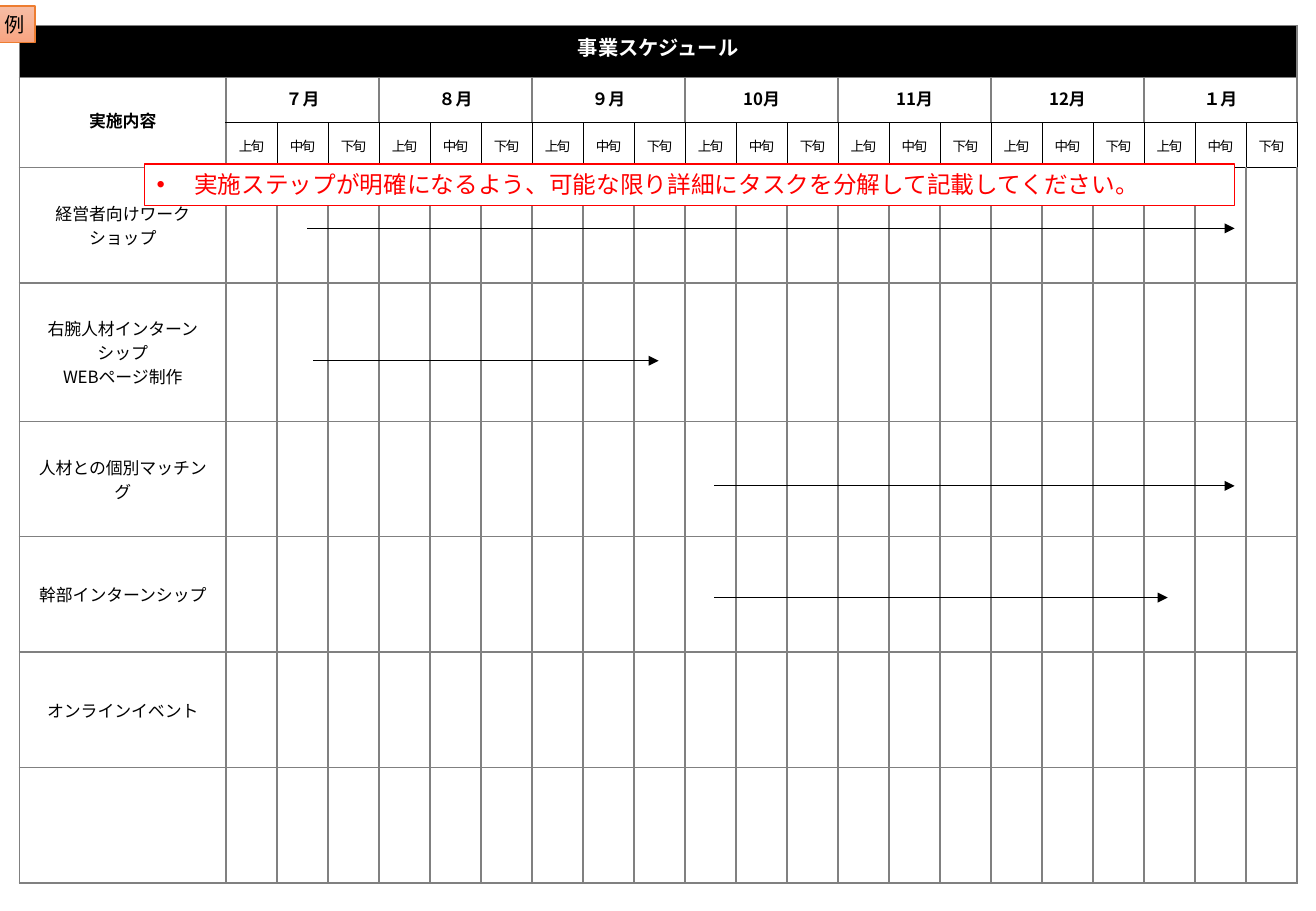
from pptx import Presentation
from pptx.dml.color import RGBColor
from pptx.enum.shapes import MSO_CONNECTOR as Connector, MSO_SHAPE as Shape
from pptx.enum.text import MSO_ANCHOR as Anchor, MSO_AUTO_SIZE as AutoSize, PP_ALIGN as Align
from pptx.oxml.ns import qn
from pptx.util import Inches, Pt
from lxml.etree import SubElement

MONTHS = ["７月", "８月", "９月", "10月", "11月", "12月", "１月"]
PERIODS = ["上旬", "中旬", "下旬"]
TASKS = [
    "経営者向けワークショップ",
    "右腕人材インターンシップ\nWEBページ制作",
    "人材との個別マッチング",
    "幹部インターンシップ",
    "オンラインイベント",
    "",
]
TASK_SPANS = [(2.53, 10.16, 1.88), (2.58, 5.42, 2.97), (5.88, 10.16, 4), (5.88, 9.61, 4.92)]
ROW_HEIGHTS = [0.43, 0.37, 0.37, 0.95, 1.14, 0.95, 0.95, 0.95, 0.95]
COLUMN_WIDTHS = [1.7] + [0.42] * len(MONTHS) * len(PERIODS)
MONTH_ROW, PERIOD_ROW, FIRST_TASK_ROW = 1, 2, 3
GREY_BORDER = ("808080", 1)
BLACK_BORDER = ("000000", 0.5)


def rgb(value):
    return RGBColor.from_string(value)


class ScheduleSlide:
    font = "Noto Sans CJK JP"

    def __init__(self, presentation):
        self.shapes = presentation.slides.add_slide(presentation.slide_layouts[6]).shapes

    def style_text(self, frame, size, color="000000", bold=False, align=Align.CENTER, spacing=None):
        for paragraph in frame.paragraphs:
            paragraph.alignment = align
            if spacing is not None:
                paragraph.line_spacing = Pt(spacing)
            for run in paragraph.runs:
                run.font.size = Pt(size)
                run.font.bold = bold
                run.font.color.rgb = rgb(color)
                run.font.name = self.font
                SubElement(run.font._element, qn("a:ea"), typeface=self.font)

    def border(self, cell, sides):
        properties = cell._tc.get_or_add_tcPr()
        for position, side in enumerate("LRTB"):
            color, width = sides[side]
            line = SubElement(properties, qn(f"a:ln{side}"), w=str(Pt(width)))
            fill = SubElement(line, qn("a:solidFill"))
            SubElement(fill, qn("a:srgbClr"), val=color)
            properties.insert(position, line)

    def table(self, left, top, widths, heights):
        frame = self.shapes.add_table(len(heights), len(widths), Inches(left), Inches(top),
                                      Inches(sum(widths)), Inches(sum(heights)))
        table = frame.table
        table.first_row = table.horz_banding = False
        for column, width in zip(table.columns, widths):
            column.width = Inches(width)
        for row, height in zip(table.rows, heights):
            row.height = Inches(height)
        return table

    def write_cell(self, cell, text, size, **style):
        cell.text = text
        cell.vertical_anchor = Anchor.MIDDLE
        self.style_text(cell.text_frame, size, **style)

    def box(self, text, left, top, width, height, outline, outline_width):
        box = self.shapes.add_shape(Shape.RECTANGLE, Inches(left), Inches(top),
                                    Inches(width), Inches(height))
        box.shadow.inherit = False
        box.line.color.rgb = rgb(outline)
        box.line.width = Pt(outline_width)
        box.text_frame.text = text
        return box

    def callout(self, text, left, top, width, height):
        box = self.box(text, left, top, width, height, "FF0000", 0.75)
        box.fill.solid()
        box.fill.fore_color.rgb = rgb("FFFFFF")
        frame = box.text_frame
        frame.word_wrap = True
        frame.auto_size = AutoSize.SHAPE_TO_FIT_TEXT
        frame.vertical_anchor = Anchor.TOP
        properties = frame.paragraphs[0]._p.get_or_add_pPr()
        properties.set("marL", str(Inches(0.31)))
        properties.set("indent", str(Inches(-0.31)))
        SubElement(properties, qn("a:buFont"), typeface="Arial")
        SubElement(properties, qn("a:buChar"), char="•")
        self.style_text(frame, 14, color="FF0000", align=Align.LEFT)

    def tag(self, text, left, top, width, height):
        box = self.box(text, left, top, width, height, "ED7D31", 1)
        box.fill.gradient()
        box.fill.gradient_angle = 270
        for stop, color in zip(box.fill.gradient_stops, ["F7BDA5", "F8A582"]):
            stop.color.rgb = rgb(color)
        frame = box.text_frame
        frame.word_wrap = False
        frame.vertical_anchor = Anchor.MIDDLE
        frame.margin_left = frame.margin_right = frame.margin_top = frame.margin_bottom = 0
        self.style_text(frame, 12)

    def arrow(self, start, end, y):
        arrow = self.shapes.add_connector(Connector.STRAIGHT, Inches(start), Inches(y),
                                          Inches(end), Inches(y))
        arrow.line.color.rgb = rgb("000000")
        arrow.line.width = Pt(0.5)
        SubElement(arrow.line._get_or_add_ln(), qn("a:tailEnd"), type="triangle")
        SubElement(arrow._element.spPr, qn("a:effectLst"))


def cell_borders(row, column):
    sides = dict.fromkeys("LRTB", GREY_BORDER)
    if column > 0:
        if row == MONTH_ROW:
            sides["B"] = BLACK_BORDER
        elif row == PERIOD_ROW:
            sides = dict.fromkeys("LRTB", BLACK_BORDER)
        elif row == FIRST_TASK_ROW:
            sides["T"] = BLACK_BORDER
    return sides


def fill_schedule(slide):
    schedule = slide.table(0.16, 0.21, COLUMN_WIDTHS, ROW_HEIGHTS)
    for row in range(len(ROW_HEIGHTS)):
        for column in range(len(COLUMN_WIDTHS)):
            cell = schedule.cell(row, column)
            if row == 0:
                cell.fill.solid()
                cell.fill.fore_color.rgb = rgb("000000")
            else:
                cell.fill.background()
            if row < FIRST_TASK_ROW:
                cell.text_frame.paragraphs[0].line_spacing = Pt(12)
            slide.border(cell, cell_borders(row, column))

    title = schedule.cell(0, 0)
    title.merge(schedule.cell(0, len(COLUMN_WIDTHS) - 1))
    slide.write_cell(title, "事業スケジュール", 12, color="FFFFFF", bold=True, spacing=12)
    content_header = schedule.cell(MONTH_ROW, 0)
    content_header.merge(schedule.cell(PERIOD_ROW, 0))
    slide.write_cell(content_header, "実施内容", 10, bold=True, spacing=12)

    for month_index, month in enumerate(MONTHS):
        first = 1 + month_index * len(PERIODS)
        month_cell = schedule.cell(MONTH_ROW, first)
        month_cell.merge(schedule.cell(MONTH_ROW, first + len(PERIODS) - 1))
        slide.write_cell(month_cell, month, 10, bold=True, spacing=12)
        for column, period in enumerate(PERIODS, first):
            period_cell = schedule.cell(PERIOD_ROW, column)
            slide.write_cell(period_cell, period, 8, spacing=12)
            period_cell.text_frame.paragraphs[0].runs[0].font._element.set("spc", "-100")

    for row, task in enumerate(TASKS, FIRST_TASK_ROW):
        slide.write_cell(schedule.cell(row, 0), task, 10)


def main():
    presentation = Presentation()
    presentation.slide_width = Inches(10.83)
    presentation.slide_height = Inches(7.5)
    slide = ScheduleSlide(presentation)
    fill_schedule(slide)
    slide.callout("実施ステップが明確になるよう、可能な限り詳細にタスクを分解して記載してください。",
                  1.19, 1.35, 8.97, 0.34)
    for start, end, y in TASK_SPANS:
        slide.arrow(start, end, y)
    slide.tag("例", -0.05, 0.05, 0.34, 0.3)
    presentation.save("out.pptx")


if __name__ == "__main__":
    main()
